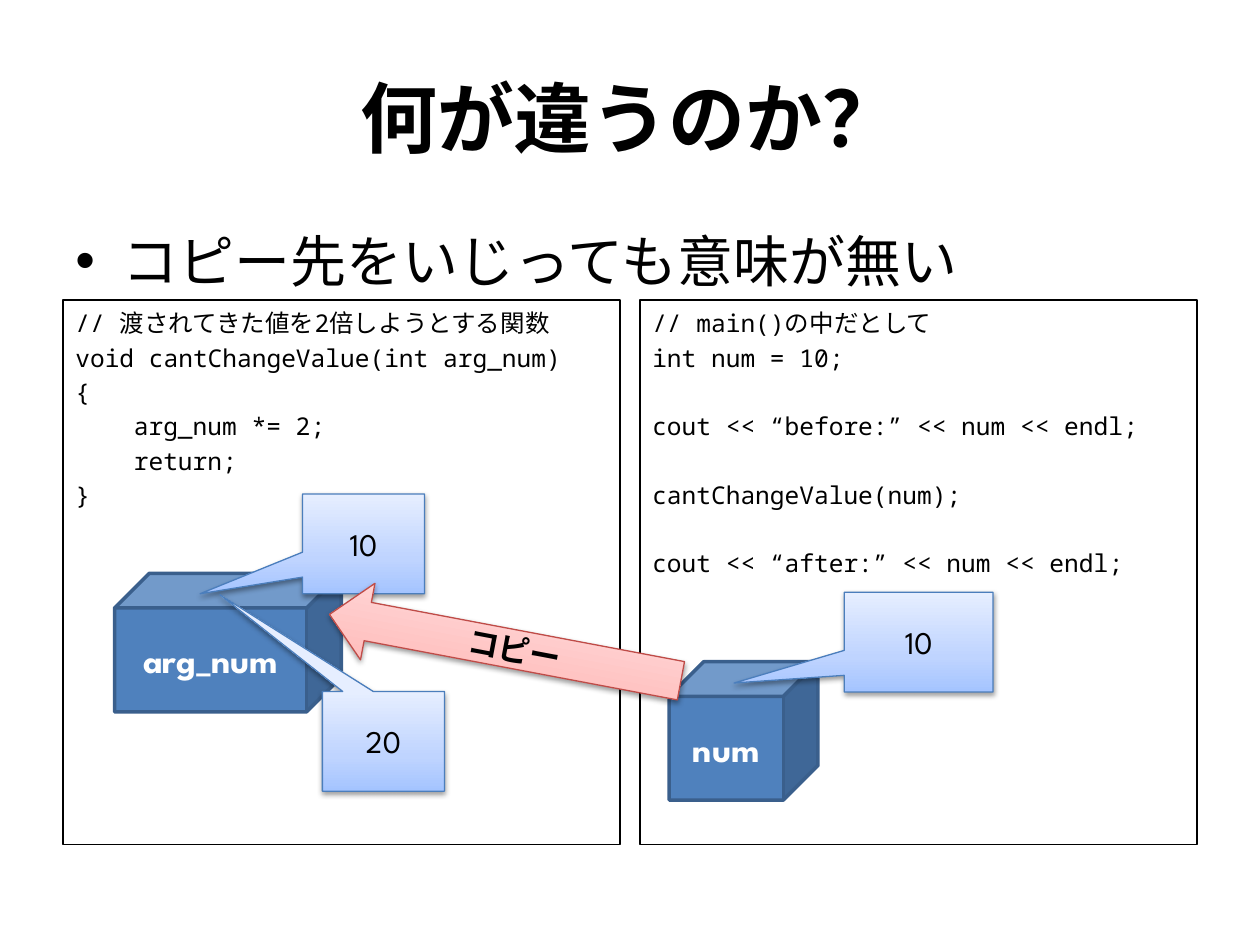
from dataclasses import dataclass

from lxml.etree import SubElement
from pptx import Presentation
from pptx.dml.color import RGBColor
from pptx.enum.shapes import MSO_SHAPE
from pptx.enum.text import MSO_ANCHOR, PP_ALIGN
from pptx.oxml.ns import qn
from pptx.util import Cm, Pt


@dataclass(frozen=True)
class Theme:
    font: str = "League Spartan"
    code_font: str = "Noto Sans Mono"
    ink: str = "000000"
    paper: str = "FFFFFF"
    cube: str = "4F81BD"
    cube_edge: str = "3A5F8C"
    blue_edge: str = "4B7EBC"
    red_edge: str = "BF4C48"
    blue_stops: tuple = ((0, "A4C4FF"), (35, "BFD4FF"), (100, "E6EEFF"))
    red_stops: tuple = ((0, "FFA6A5"), (35, "FFC0BF"), (100, "FFE7E7"))
    title: int = 44
    body: int = 32
    variable: int = 20
    value: int = 18
    code: int = 14
    code_pitch: float = 19.6


theme = Theme()


def write(shape, text, size, color=theme.ink, bold=False, font=theme.font, centred=True):
    frame = shape.text_frame
    frame.word_wrap = True
    frame.text = text
    frame.vertical_anchor = MSO_ANCHOR.MIDDLE if centred else MSO_ANCHOR.TOP
    for paragraph in frame.paragraphs:
        paragraph.alignment = PP_ALIGN.CENTER if centred else PP_ALIGN.LEFT
        for run in paragraph.runs:
            run.font.name = font
            run.font.size = Pt(size)
            run.font.bold = bold
            run.font.color.rgb = RGBColor.from_string(color)


def make_glossy(shape, stops, edge):
    """Give a shape an upward gradient, a thin edge and a soft shadow below."""
    shape.fill.gradient()
    shape.fill.gradient_angle = 90
    stop_list = shape._element.spPr.find(qn("a:gradFill")).find(qn("a:gsLst"))
    for old_stop in list(stop_list):
        stop_list.remove(old_stop)
    for percent, color in stops:
        stop = SubElement(stop_list, qn("a:gs"), pos=str(percent * 1000))
        SubElement(stop, qn("a:srgbClr"), val=color)
    shape.line.color.rgb = RGBColor.from_string(edge)
    shape.line.width = Pt(0.75)
    shape.shadow.inherit = False
    effects = shape._element.spPr.find(qn("a:effectLst"))
    shadow = SubElement(effects, qn("a:outerShdw"), blurRad=str(Pt(3.1)),
                        dist=str(Pt(1.6)), dir="5400000", rotWithShape="0")
    shadow_color = SubElement(shadow, qn("a:srgbClr"), val=theme.ink)
    SubElement(shadow_color, qn("a:alpha"), val="38000")


deck = Presentation()
deck.slide_width, deck.slide_height = Cm(25.4), Cm(19.05)
slide = deck.slides.add_slide(deck.slide_layouts[6])
shapes = slide.shapes

# Heading and bullet
title = shapes.add_textbox(Cm(1.27), Cm(0.76), Cm(22.86), Cm(3.18))
write(title, "何が違うのか？", theme.title, bold=True)

message = shapes.add_textbox(Cm(1.27), Cm(4.45), Cm(22.86), Cm(1.6))
write(message, "コピー先をいじっても意味が無い", theme.body, centred=False)
bullet_format = message.text_frame.paragraphs[0]._p.get_or_add_pPr()
bullet_format.set("marL", str(Cm(0.95)))
bullet_format.set("indent", str(-Cm(0.95)))
SubElement(bullet_format, qn("a:buFont"), typeface="Arial")
SubElement(bullet_format, qn("a:buChar"), char="•")

# Code panels: (left, lines, indented line numbers, line numbers after a gap)
code_panels = [
    (1.27, ["// 渡されてきた値を2倍しようとする関数",
            "void cantChangeValue(int arg_num)",
            "{", "arg_num *= 2;", "return;", "}"], (3, 4), ()),
    (12.9, ["// main()の中だとして",
            "int num = 10;",
            "cout << “before:” << num << endl;",
            "cantChangeValue(num);",
            "cout << “after:” << num << endl;"], (), (2, 3, 4)),
]
for left, lines, indented, after_gap in code_panels:
    panel = shapes.add_shape(MSO_SHAPE.RECTANGLE, Cm(left), Cm(6.05), Cm(11.23), Cm(10.97))
    panel.shadow.inherit = False
    panel.fill.background()
    panel.line.color.rgb = RGBColor.from_string(theme.ink)
    panel.line.width = Pt(0.75)
    write(panel, "\n".join(lines), theme.code, font=theme.code_font, centred=False)
    panel.text_frame.margin_top = Cm(0.07)
    for number, paragraph in enumerate(panel.text_frame.paragraphs):
        paragraph.line_spacing = Pt(theme.code_pitch)
        paragraph.space_before = Pt(theme.code_pitch if number in after_gap else 0)
        if number in indented:
            paragraph._p.get_or_add_pPr().set("marL", str(Cm(1.18)))

# Variables in memory
for name, left, top, width in [("num", 13.49, 13.34, 3.0), ("arg_num", 2.31, 11.56, 4.57)]:
    variable = shapes.add_shape(MSO_SHAPE.CUBE, Cm(left), Cm(top), Cm(width), Cm(2.79))
    variable.shadow.inherit = False
    variable.fill.solid()
    variable.fill.fore_color.rgb = RGBColor.from_string(theme.cube)
    variable.line.color.rgb = RGBColor.from_string(theme.cube_edge)
    variable.line.width = Pt(2)
    write(variable, name, theme.variable, theme.paper, bold=True)

# Values and the copy arrow, from back to front
callout, arrow = MSO_SHAPE.RECTANGULAR_CALLOUT, MSO_SHAPE.LEFT_ARROW
blue, red = (theme.blue_stops, theme.blue_edge), (theme.red_stops, theme.red_edge)
for kind, text, box, adjustments, rotation, finish in [
    (callout, "10", (17.02, 11.94, 3.0, 2.01), (-1.24, 0.41), 0, blue),
    (callout, "10", (6.1, 9.96, 2.46, 2.01), (-1.34, 0.5), 0, blue),
    (arrow, "コピー", (6.58, 12.27, 7.21, 1.57), (), 10.7, red),
    (callout, "20", (6.5, 13.94, 2.46, 2.01), (-1.34, -1.47), 0, blue),
]:
    marker = shapes.add_shape(kind, *map(Cm, box))
    for index, adjustment in enumerate(adjustments):
        marker.adjustments[index] = adjustment
    marker.rotation = rotation
    make_glossy(marker, *finish)
    write(marker, text, theme.value, bold=kind == arrow)

deck.save("out.pptx")
